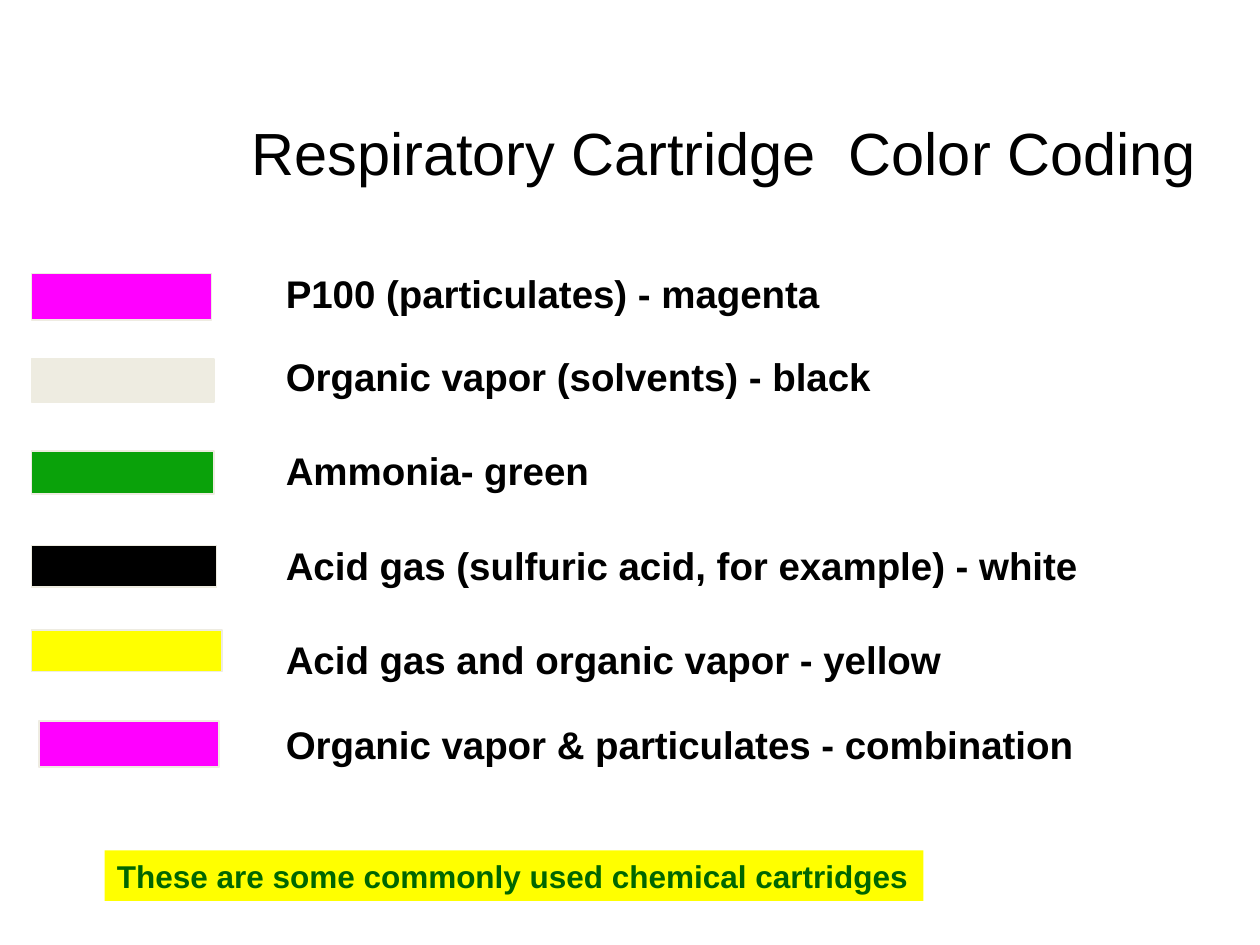
from dataclasses import dataclass

import pptx
import pptx.dml.color
import pptx.enum.shapes
import pptx.enum.text
import pptx.util

PX = 9144  # EMU per px, at 100 px to the inch
FONT = "Arial"
COLORS = {
    "text": "000000",
    "note": "006600",
    "outline": "EEECE1",
    "magenta": "FF00FF",
    "beige": "EEECE1",
    "green": "0AA20A",
    "black": "000000",
    "yellow": "FFFF00",
}
LABEL_LEFT, LABEL_HEIGHT = 217, 47


@dataclass
class Box:
    left: int
    top: int
    width: int
    height: int

    def emu(self) -> tuple[int, ...]:
        return tuple(v * PX for v in (self.left, self.top, self.width, self.height))


@dataclass
class Cartridge:
    label: str
    label_top: int
    label_width: int
    color: str
    swatch: Box


CARTRIDGES = [
    Cartridge("P100 (particulates) - magenta", 209, 533, "magenta", Box(25, 217, 143, 37)),
    Cartridge("Organic vapor (solvents) - black", 275, 541, "beige", Box(25, 285, 145, 34)),
    Cartridge("Ammonia- green", 350, 324, "green", Box(25, 358, 145, 34)),
    Cartridge("Acid gas (sulfuric acid, for example) - white", 425, 714, "black", Box(25, 433, 147, 33)),
    Cartridge("Acid gas and organic vapor - yellow", 500, 677, "yellow", Box(25, 500, 151, 33)),
    Cartridge("Organic vapor & particulates - combination", 567, 713, "magenta", Box(31, 572, 143, 37)),
]


def rgb(name: str) -> pptx.dml.color.RGBColor:
    return pptx.dml.color.RGBColor.from_string(COLORS[name])


def add_text(s, box: Box, text: str, size: int, color: str = "text", bold: bool = True):
    sp = s.shapes.add_textbox(*box.emu())
    tf = sp.text_frame
    tf.text = text
    tf.word_wrap = True
    font = tf.paragraphs[0].runs[0].font
    font.name, font.size, font.bold = FONT, pptx.util.Pt(size), bold
    font.color.rgb = rgb(color)
    return sp


def add_swatch(s, box: Box, color: str) -> None:
    sp = s.shapes.add_shape(pptx.enum.shapes.MSO_SHAPE.RECTANGLE, *box.emu())
    sp.shadow.inherit = False
    sp.fill.solid()
    sp.fill.fore_color.rgb = rgb(color)
    sp.line.color.rgb = rgb("outline")
    sp.line.width = pptx.util.Pt(1)


def main() -> None:
    prs = pptx.Presentation()
    prs.slide_width, prs.slide_height = 1000 * PX, 750 * PX
    s = prs.slides.add_slide(prs.slide_layouts[6])

    title = add_text(s, Box(166, 58, 817, 125), "Respiratory Cartridge  Color Coding", 34, bold=False)
    title.text_frame.vertical_anchor = pptx.enum.text.MSO_ANCHOR.MIDDLE
    title.text_frame.paragraphs[0].alignment = pptx.enum.text.PP_ALIGN.CENTER

    for c in CARTRIDGES:
        add_swatch(s, c.swatch, c.color)
        add_text(s, Box(LABEL_LEFT, c.label_top, c.label_width, LABEL_HEIGHT), c.label, 22)

    note = add_text(s, Box(83, 675, 650, 40), "These are some commonly used chemical cartridges", 18, "note")
    note.fill.solid()
    note.fill.fore_color.rgb = rgb("yellow")

    prs.save("out.pptx")


if __name__ == "__main__":
    main()
